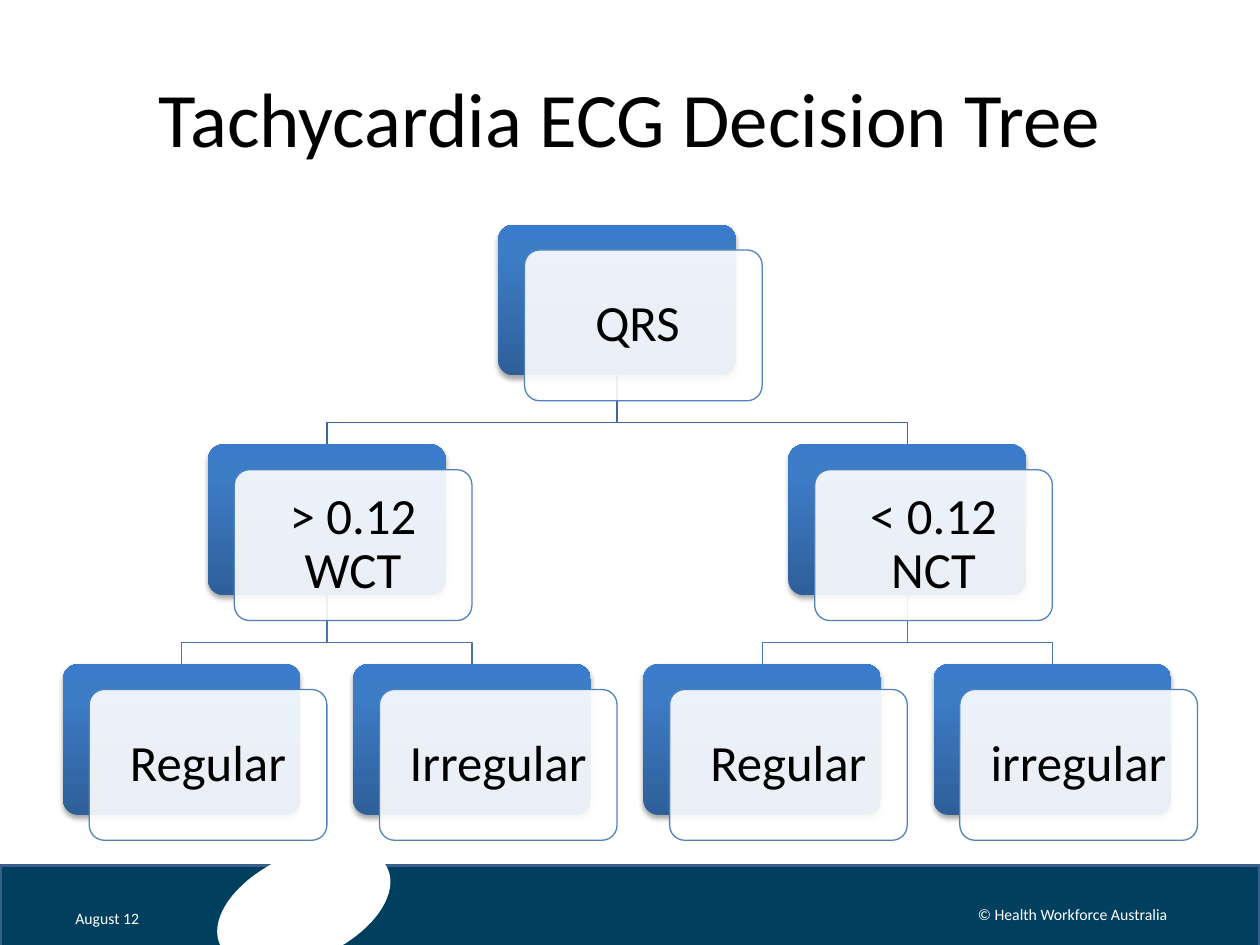
from copy import deepcopy

from lxml.etree import SubElement
from pptx import Presentation
from pptx.dml.color import RGBColor
from pptx.enum.shapes import MSO_SHAPE as Shape
from pptx.enum.text import MSO_ANCHOR as Anchor, PP_ALIGN as Align
from pptx.oxml.ns import qn
from pptx.util import Cm, Pt

COLORS = {
    "white": "FFFFFF", "black": "000000", "footer": "003F5E", "footer_edge": "3A5F8C",
    "panel_edge": "4F81BD", "upper_link": "3F6797", "lower_link": "4875AC",
    "card_bottom": "2F5F99", "card_upper": "3D7CC7", "card_top": "3A7CCB",
}
CARD_STOPS = [(0, "card_bottom"), (0.8, "card_upper"), (1, "card_top")]
CARD_WIDTH, CARD_HEIGHT = 4.79, 3.04
PANEL_SHIFT_X, PANEL_SHIFT_Y = 0.53, 0.51
TREE_LEFT, TREE_TOP = 1.27, 4.53
COLUMN_STEP, ROW_STEP = 5.85, 4.43
BEND_ABOVE_CHILD = 0.44

NODES = [
    ("QRS ", 1.5, 0),
    ("> 0.12 WCT", 0.5, 1), ("Regular", 0, 2), ("Irregular", 1, 2),
    ("< 0.12 NCT", 2.5, 1), ("Regular", 2, 2), ("irregular", 3, 2),
]
LINKS = [(2.5, 3, 1), (2.5, 2, 1), (1.5, 2.5, 0), (0.5, 1, 1), (0.5, 0, 1), (1.5, 0.5, 0)]


def color(name):
    return RGBColor.from_string(COLORS[name])


def card_position(column, row):
    return TREE_LEFT + column * COLUMN_STEP, TREE_TOP + row * ROW_STEP


class TreeSlide:
    """Draws the decision tree elements on one slide in a shared style."""

    def __init__(self, slide, font="Calibri"):
        self.slide = slide
        self.font = font

    def label(self, shape, text, size, color_name, align=Align.CENTER, spacing=None):
        frame = shape.text_frame
        frame.text = text
        frame.word_wrap = True
        frame.vertical_anchor = Anchor.MIDDLE
        paragraph = frame.paragraphs[0]
        paragraph.alignment = align
        if spacing:
            paragraph.line_spacing = spacing
        font = paragraph.runs[0].font
        font.name, font.size = self.font, Pt(size)
        font.color.rgb = color(color_name)

    def text(self, box, text, size, color_name, align=Align.CENTER):
        shape = self.slide.shapes.add_textbox(*map(Cm, box))
        self.label(shape, text, size, color_name, align)

    def shape(self, kind, box, fill=None, edge=None, width=0.75):
        shape = self.slide.shapes.add_shape(kind, *map(Cm, box))
        shape.shadow.inherit = False
        if fill:
            shape.fill.solid()
            shape.fill.fore_color.rgb = color(fill)
        if edge:
            shape.line.color.rgb = color(edge)
            shape.line.width = Pt(width)
        else:
            shape.line.fill.background()
        return shape

    def link(self, parent, child, row):
        parent_left, parent_top = card_position(parent, row)
        child_left, child_top = card_position(child, row + 1)
        start, end = parent_left + CARD_WIDTH / 2, child_left + CARD_WIDTH / 2
        bend = child_top - BEND_ABOVE_CHILD
        points = [(start, bend), (end, bend), (end, child_top)]
        builder = self.slide.shapes.build_freeform(Cm(start), Cm(parent_top + CARD_HEIGHT))
        builder.add_line_segments([(Cm(x), Cm(y)) for x, y in points], close=False)
        shape = builder.convert_to_shape()
        shape.shadow.inherit = False
        shape.fill.background()
        shape.line.color.rgb = color("lower_link" if row else "upper_link")
        shape.line.width = Pt(0.75)

    def card(self, left, top):
        card = self.shape(Shape.ROUNDED_RECTANGLE, (left, top, CARD_WIDTH, CARD_HEIGHT))
        card.adjustments[0] = 0.1
        card.fill.gradient()
        card.fill.gradient_angle = 90
        properties = card.element.spPr
        stop_list = properties.find(".//" + qn("a:gsLst"))
        stop_list.append(deepcopy(stop_list[-1]))
        for stop, (position, name) in zip(card.fill.gradient_stops, CARD_STOPS):
            stop.position = position
            stop.color.rgb = color(name)
        shadow = SubElement(properties.find(qn("a:effectLst")), qn("a:outerShdw"),
                            blurRad=str(Pt(3.1)), dist=str(Pt(1.8)), dir="5400000", rotWithShape="0")
        tint = SubElement(shadow, qn("a:srgbClr"), val=COLORS["black"])
        SubElement(tint, qn("a:alpha"), val="35000")

    def panel(self, left, top, text):
        box = (left + PANEL_SHIFT_X, top + PANEL_SHIFT_Y, CARD_WIDTH, CARD_HEIGHT)
        panel = self.shape(Shape.ROUNDED_RECTANGLE, box, "white", "panel_edge")
        panel.adjustments[0] = 0.1
        fill = panel.element.spPr.find(qn("a:solidFill"))
        SubElement(fill[0], qn("a:alpha"), val="90000")
        frame = panel.text_frame
        frame.margin_left = frame.margin_right = Cm(0.3)
        frame.margin_top = frame.margin_bottom = Cm(0.3)
        self.label(panel, text, 29, "black", spacing=0.9)

    def node(self, text, column, row):
        left, top = card_position(column, row)
        self.card(left, top)
        self.panel(left, top, text)

    def footer(self):
        self.shape(Shape.RECTANGLE, (0, 17.45, 25.4, 1.65), "footer", "footer_edge", 2)
        ellipse = self.shape(Shape.OVAL, (4.27, 17.22, 3.71, 2.11), "white")
        ellipse.rotation = 335.7
        self.text((1.27, 18.14, 2.03, 0.74), "August 12", 9, "white", Align.LEFT)
        self.text((18.9, 17.93, 5.44, 1.02), "© Health Workforce Australia", 9, "white")


def main():
    presentation = Presentation()
    presentation.slide_width, presentation.slide_height = Cm(25.4), Cm(19.05)
    tree = TreeSlide(presentation.slides.add_slide(presentation.slide_layouts[6]))
    tree.footer()
    tree.text((1.27, 0.76, 22.86, 3.18), "Tachycardia ECG Decision Tree", 44, "black")
    for link in LINKS:
        tree.link(*link)
    for node in NODES:
        tree.node(*node)
    presentation.save("out.pptx")


if __name__ == "__main__":
    main()
